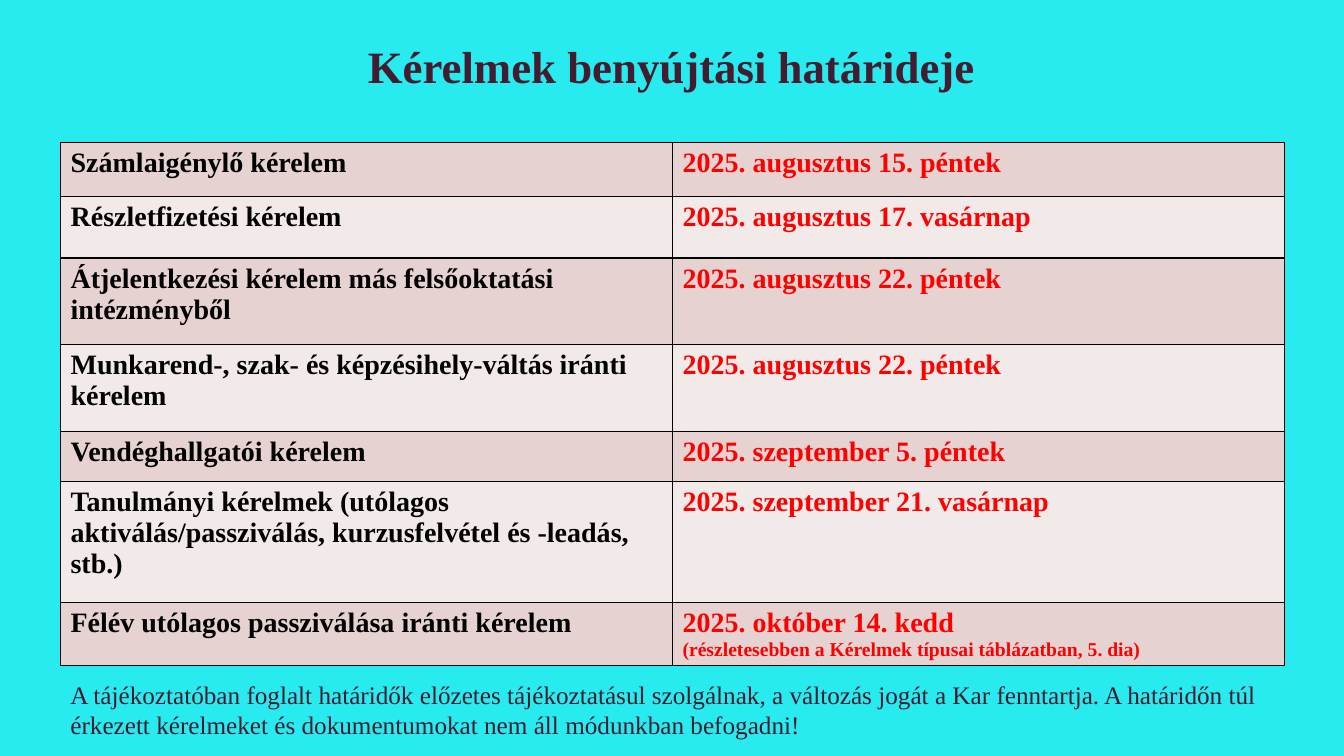
import lxml.etree
import pptx
import pptx.dml.color
import pptx.enum.text
import pptx.oxml.ns
import pptx.util

Inches = pptx.util.Inches
FONT = "Times New Roman"
PLUM = "431C30"
BLACK = "000000"
RED = "FF0000"
BAND_FILLS = ("E5D2D1", "F2EAE9")
TITLE = "Kérelmek benyújtási határideje"
NOTICE = (
    "A tájékoztatóban foglalt határidők előzetes tájékoztatásul szolgálnak, "
    "a változás jogát a Kar fenntartja. A határidőn túl érkezett kérelmeket "
    "és dokumentumokat nem áll módunkban befogadni!"
)
DEADLINES = (
    (0.54, "Számlaigénylő kérelem", "2025. augusztus 15. péntek"),
    (0.61, "Részletfizetési kérelem", "2025. augusztus 17. vasárnap"),
    (0.86, "Átjelentkezési kérelem más felsőoktatási intézményből",
     "2025. augusztus 22. péntek"),
    (0.86, "Munkarend-, szak- és képzésihely-váltás iránti kérelem",
     "2025. augusztus 22. péntek"),
    (0.5, "Vendéghallgatói kérelem", "2025. szeptember 5. péntek"),
    (1.2, "Tanulmányi kérelmek (utólagos\vaktiválás/passziválás, "
     "kurzusfelvétel és -leadás, stb.)", "2025. szeptember 21. vasárnap"),
    (0.53, "Félév utólagos passziválása iránti kérelem",
     "2025. október 14. kedd\n"
     "(részletesebben a Kérelmek típusai táblázatban, 5. dia)"),
)


def rgb(color):
    return pptx.dml.color.RGBColor.from_string(color)


def format_runs(paragraph, size, color, bold):
    for run in paragraph.runs:
        run.font.name = FONT
        run.font.size = pptx.util.Pt(size)
        run.font.bold = bold
        run.font.color.rgb = rgb(color)


def add_text(slide, box, text, size, bold=False):
    shape = slide.shapes.add_textbox(*map(Inches, box))
    frame = shape.text_frame
    frame.word_wrap = True
    frame.text = text
    format_runs(frame.paragraphs[0], size, PLUM, bold)
    return frame


def add_title(slide, box):
    frame = add_text(slide, box, TITLE, 32, bold=True)
    frame.vertical_anchor = pptx.enum.text.MSO_ANCHOR.BOTTOM
    frame.paragraphs[0].alignment = pptx.enum.text.PP_ALIGN.CENTER


def add_notice(slide, box):
    frame = add_text(slide, box, NOTICE, 18)
    frame.auto_size = pptx.enum.text.MSO_AUTO_SIZE.SHAPE_TO_FIT_TEXT


def add_borders(cell):
    qn = pptx.oxml.ns.qn
    properties = cell._tc.get_or_add_tcPr()
    for position, side in enumerate(("a:lnL", "a:lnR", "a:lnT", "a:lnB")):
        line = lxml.etree.Element(qn(side), w=str(pptx.util.Pt(1)))
        fill = lxml.etree.SubElement(line, qn("a:solidFill"))
        lxml.etree.SubElement(fill, qn("a:srgbClr"), val=BLACK)
        properties.insert(position, line)


def fill_cell(cell, text, color, fill):
    cell.fill.solid()
    cell.fill.fore_color.rgb = rgb(fill)
    cell.text_frame.text = text
    for number, paragraph in enumerate(cell.text_frame.paragraphs):
        format_runs(paragraph, 14 if number else 20, color, True)
    add_borders(cell)


def add_deadlines(slide, box):
    frame = slide.shapes.add_table(len(DEADLINES), 2, *map(Inches, box))
    table = frame.table
    for column in table.columns:
        column.width = Inches(box[2] / 2)
    for number, (height, request, deadline) in enumerate(DEADLINES):
        table.rows[number].height = Inches(height)
        fill = BAND_FILLS[number % 2]
        fill_cell(table.cell(number, 0), request, BLACK, fill)
        fill_cell(table.cell(number, 1), deadline, RED, fill)


def main():
    presentation = pptx.Presentation()
    presentation.slide_width = Inches(13.33)
    presentation.slide_height = Inches(7.5)
    slide = presentation.slides.add_slide(presentation.slide_layouts[6])
    slide.background.fill.solid()
    slide.background.fill.fore_color.rgb = rgb("28EBF0")
    add_deadlines(slide, (0.6, 1.41, 12.14, 5.24))
    add_title(slide, (2.41, 0.16, 8.5, 0.81))
    add_notice(slide, (0.6, 6.69, 12.14, 0.71))
    presentation.save("out.pptx")


if __name__ == "__main__":
    main()
